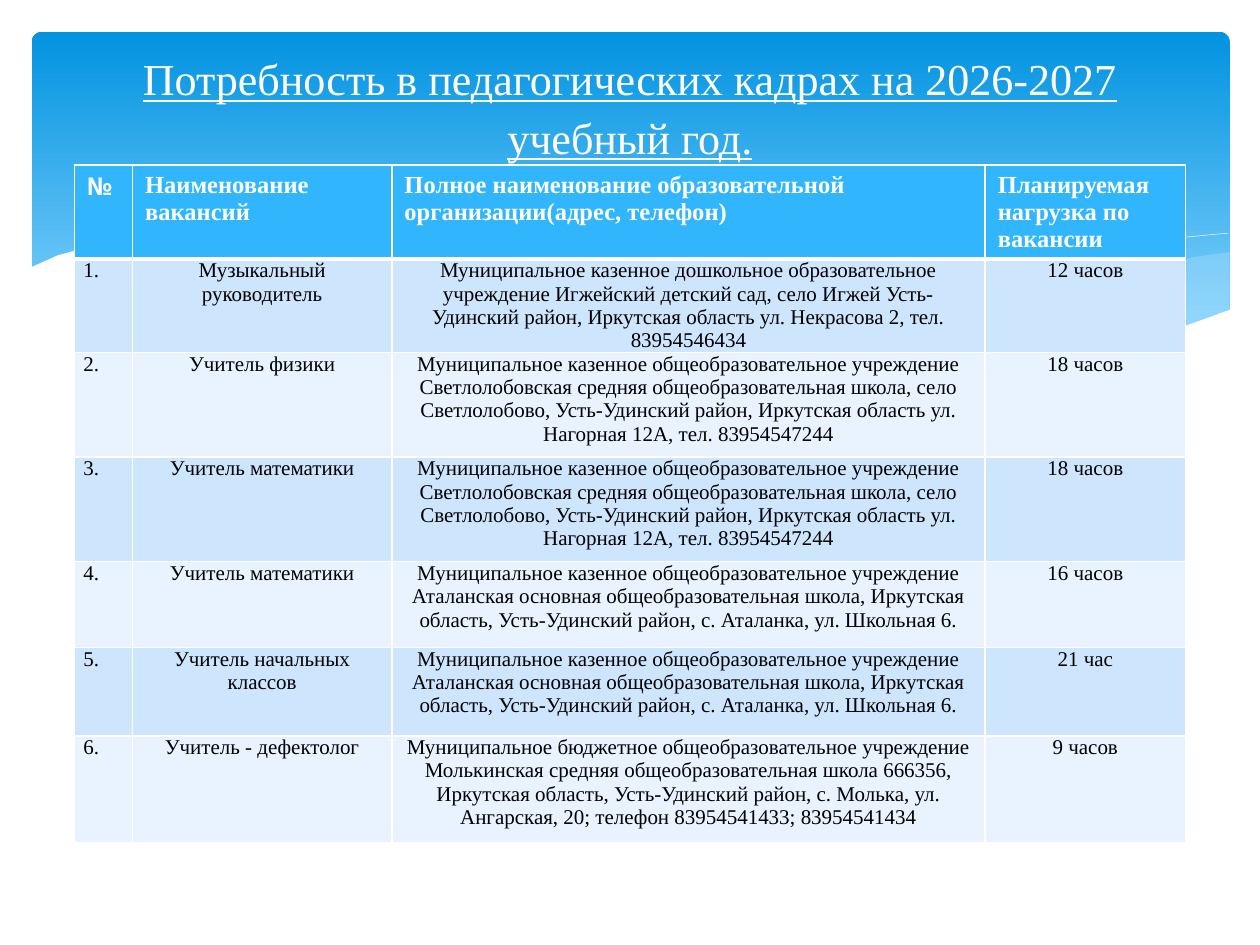
import dataclasses

import lxml.etree
import pptx
import pptx.dml.color
import pptx.enum.shapes
import pptx.enum.text
import pptx.oxml.ns
import pptx.util

Cm = pptx.util.Cm
Pt = pptx.util.Pt
qn = pptx.oxml.ns.qn
ALIGN = pptx.enum.text.PP_ALIGN


@dataclasses.dataclass(frozen=True)
class Theme:
    font: str = "Times New Roman"
    number_font: str = "Cabin"
    white: str = "FFFFFF"
    text: str = "000000"
    sky_top: str = "0293E0"
    sky_bottom: str = "83D3FE"
    wave: str = "C6E7FC"
    header: str = "31B6FD"
    bands: tuple = ("CEE5FE", "E8F3FF")
    title_size: float = 25.2
    header_size: float = 14
    body_size: float = 12


THEME = Theme()

# Wave outlines, in centimetres from the corner of the wave band
RIGHT_WAVE = [
    (24.21, 0.41), (23.5, 0.51), (22.43, 0.74), (21.29, 0.99), (19.86, 1.35),
    (18.54, 1.63), (17.35, 1.85), (16.21, 2.06), (17.32, 2.21), (18.34, 2.31),
    (19.81, 2.39), (21.11, 2.34), (22, 2.24), (22.81, 2.06), (23.52, 1.85),
    (24.21, 1.6)]
MIDDLE_WAVE = [
    (22.1, 2.26), (20.68, 2.06), (19.1, 1.78), (17.35, 1.42), (15.39, 0.97),
    (14.25, 0.69), (13.16, 0.48), (12.17, 0.3), (10.64, 0.13), (9.55, 0.05),
    (8.59, 0.03), (7.75, 0.08), (6.68, 0.18), (8.1, 0.38), (9.68, 0.69),
    (10.82, 0.97), (12.88, 1.42), (14.68, 1.8), (16.31, 2.08), (17.75, 2.29),
    (19.35, 2.39), (20.7, 2.39), (21.67, 2.31)]
LONG_CREST = [
    (7.26, 0.28), (8.38, 0.13), (9.6, 0.08), (11.33, 0.13), (12.95, 0.25),
    (14.86, 0.51), (17.07, 0.89), (19.61, 1.45), (22.45, 2.24)]
SHORT_CREST = [
    (14.99, 1.85), (17.07, 1.3), (19.13, 0.81), (21.41, 0.38), (22.89, 0.15),
    (24.18, 0.03)]
FRONT_WAVE = [
    (24.23, 1.57), (23.29, 1.91), (22.25, 2.16), (21.01, 2.31), (19.96, 2.36),
    (18.75, 2.31), (17.4, 2.18), (15.88, 1.98), (14.12, 1.68), (12.19, 1.24),
    (10.77, 0.91), (9.35, 0.58), (8.05, 0.33), (6.83, 0.15), (5.77, 0.05),
    (4.78, 0), (3.91, 0), (2.77, 0.05), (1.83, 0.18), (1.12, 0.33),
    (0.58, 0.48), (0, 0.74), (0, 3.68), (24.23, 3.68)]

TITLE = "Потребность в педагогических кадрах на 2026-2027 учебный год."
HEADERS = ["№", "Наименование вакансий",
           "Полное наименование образовательной организации(адрес, телефон)",
           "Планируемая нагрузка по вакансии"]
SVETLOLOBOVO = (
    "Муниципальное казенное общеобразовательное учреждение Светлолобовская "
    "средняя общеобразовательная школа, село Светлолобово, Усть-Удинский район, "
    "Иркутская область ул. Нагорная 12А, тел. 83954547244")
ATALANKA = (
    "Муниципальное казенное общеобразовательное учреждение Аталанская основная "
    "общеобразовательная школа, Иркутская область, Усть-Удинский район, "
    "с. Аталанка, ул. Школьная 6.")
VACANCIES = [
    ("Музыкальный руководитель",
     "Муниципальное казенное дошкольное образовательное учреждение Игжейский "
     "детский сад, село Игжей Усть-Удинский район, Иркутская область "
     "ул. Некрасова 2, тел. 83954546434", "12 часов"),
    ("Учитель физики", SVETLOLOBOVO, "18 часов"),
    ("Учитель математики", SVETLOLOBOVO, "18 часов"),
    ("Учитель математики", ATALANKA, "16 часов"),
    ("Учитель начальных классов", ATALANKA, "21 час"),
    ("Учитель - дефектолог",
     "Муниципальное бюджетное общеобразовательное учреждение Молькинская средняя "
     "общеобразовательная школа 666356, Иркутская область, Усть-Удинский район, "
     "с. Молька, ул. Ангарская, 20; телефон 83954541433; 83954541434", "9 часов"),
]
COLUMN_WIDTHS = [1.17, 5.23, 11.96, 4.04]
ROW_HEIGHTS = [1.85, 1.85, 2.11, 2.11, 1.73, 1.78, 2.16]


def rgb(value):
    return pptx.dml.color.RGBColor.from_string(value)


def add_run(paragraph, text, size, color, font=THEME.font, bold=False):
    run = paragraph.add_run()
    run.text = text
    run.font.name = font
    run.font.size = Pt(size)
    run.font.bold = bold
    run.font.color.rgb = rgb(color)
    return run


def add_outline(slide, box, points, closed):
    left, top = box
    # The builder rounds to whole units, so points are given in EMU
    vertices = [(Cm(x), Cm(y)) for x, y in points]
    builder = slide.shapes.build_freeform(*vertices[0])
    builder.add_line_segments(vertices[1:], close=closed)
    shape = builder.convert_to_shape(Cm(left), Cm(top))
    shape.shadow.inherit = False
    return shape


def add_wave(slide, box, points, color, opacity=100):
    shape = add_outline(slide, box, points, True)
    shape.fill.solid()
    shape.fill.fore_color.rgb = rgb(color)
    shape.line.fill.background()
    if opacity < 100:
        color_element = shape.element.spPr.find(".//" + qn("a:srgbClr"))
        lxml.etree.SubElement(color_element, qn("a:alpha"), val=str(opacity * 1000))


def add_crest(slide, box, points):
    shape = add_outline(slide, box, points, False)
    shape.fill.background()
    shape.line.color.rgb = rgb(THEME.white)
    shape.line.width = Pt(0.25)


def add_backdrop(slide, box):
    left, top, width, height = box
    # Gradient panel
    panel = slide.shapes.add_shape(
        pptx.enum.shapes.MSO_SHAPE.ROUNDED_RECTANGLE,
        Cm(left), Cm(top), Cm(width), Cm(height))
    panel.adjustments[0] = 0.03
    panel.shadow.inherit = False
    panel.line.fill.background()
    panel.fill.gradient()
    panel.fill.gradient_angle = 270
    stops = zip(panel.fill.gradient_stops,
                [(0, THEME.sky_top), (0.9, THEME.sky_bottom)])
    for stop, (position, color) in stops:
        stop.position = position
        stop.color.rgb = rgb(color)
    # Waves along the lower edge
    band = (left - 0.06, top + 4.03)
    add_wave(slide, band, RIGHT_WAVE, THEME.wave, 29)
    add_wave(slide, band, MIDDLE_WAVE, THEME.wave, 40)
    for crest in (LONG_CREST, SHORT_CREST):
        add_crest(slide, band, crest)
    add_wave(slide, band, FRONT_WAVE, THEME.white)


def style_cell(cell, fill, bottom_width):
    properties = cell._tc.get_or_add_tcPr()
    for side, width in (("L", 1), ("R", 1), ("T", 1), ("B", bottom_width)):
        line = lxml.etree.SubElement(properties, qn("a:ln" + side), w=str(Pt(width)))
        solid = lxml.etree.SubElement(line, qn("a:solidFill"))
        lxml.etree.SubElement(solid, qn("a:srgbClr"), val=THEME.white)
    cell.fill.solid()
    cell.fill.fore_color.rgb = rgb(fill)


def add_vacancy_table(slide, box):
    left, top = box
    table = slide.shapes.add_table(
        len(ROW_HEIGHTS), len(COLUMN_WIDTHS), Cm(left), Cm(top),
        Cm(sum(COLUMN_WIDTHS)), Cm(sum(ROW_HEIGHTS))).table
    for column, width in zip(table.columns, COLUMN_WIDTHS):
        column.width = Cm(width)
    for row, height in zip(table.rows, ROW_HEIGHTS):
        row.height = Cm(height)
    # Header row
    for index, text in enumerate(HEADERS):
        cell = table.cell(0, index)
        style_cell(cell, THEME.header, 3)
        font = THEME.font if index else THEME.number_font
        add_run(cell.text_frame.paragraphs[0], text, THEME.header_size,
                THEME.white, font, True)
    # Numbered vacancies
    for number, vacancy in enumerate(VACANCIES, 1):
        for index, text in enumerate((f"{number}.", *vacancy)):
            cell = table.cell(number, index)
            style_cell(cell, THEME.bands[(number - 1) % 2], 1)
            cell.margin_left = cell.margin_right = Cm(0.18)
            cell.margin_top = cell.margin_bottom = 0
            paragraph = cell.text_frame.paragraphs[0]
            paragraph.alignment = ALIGN.CENTER if index else ALIGN.LEFT
            add_run(paragraph, text, THEME.body_size, THEME.text)


def place_title(slide, box):
    title = slide.shapes.title
    title.left, title.top, title.width, title.height = map(Cm, box)
    frame = title.text_frame
    frame.word_wrap = True
    frame.auto_size = pptx.enum.text.MSO_AUTO_SIZE.NONE
    frame.vertical_anchor = pptx.enum.text.MSO_ANCHOR.TOP
    frame.margin_top = 0
    paragraph = frame.paragraphs[0]
    paragraph.alignment = ALIGN.CENTER
    paragraph.line_spacing = 1.1
    paragraph.space_before = Pt(0)
    add_run(paragraph, TITLE, THEME.title_size, THEME.white).font.underline = True
    # Bring the title in front of the backdrop and the table
    slide.shapes.element.append(title.element)


def main():
    presentation = pptx.Presentation()
    presentation.slide_width = Cm(25.4)
    presentation.slide_height = Cm(19.05)
    slide = presentation.slides.add_slide(presentation.slide_layouts[5])
    add_backdrop(slide, (0.64, 0.64, 24.15, 6.86))
    add_vacancy_table(slide, (1.5, 3.33))
    place_title(slide, (1.27, 0.94, 22.86, 3.48))
    presentation.save("out.pptx")


if __name__ == "__main__":
    main()
